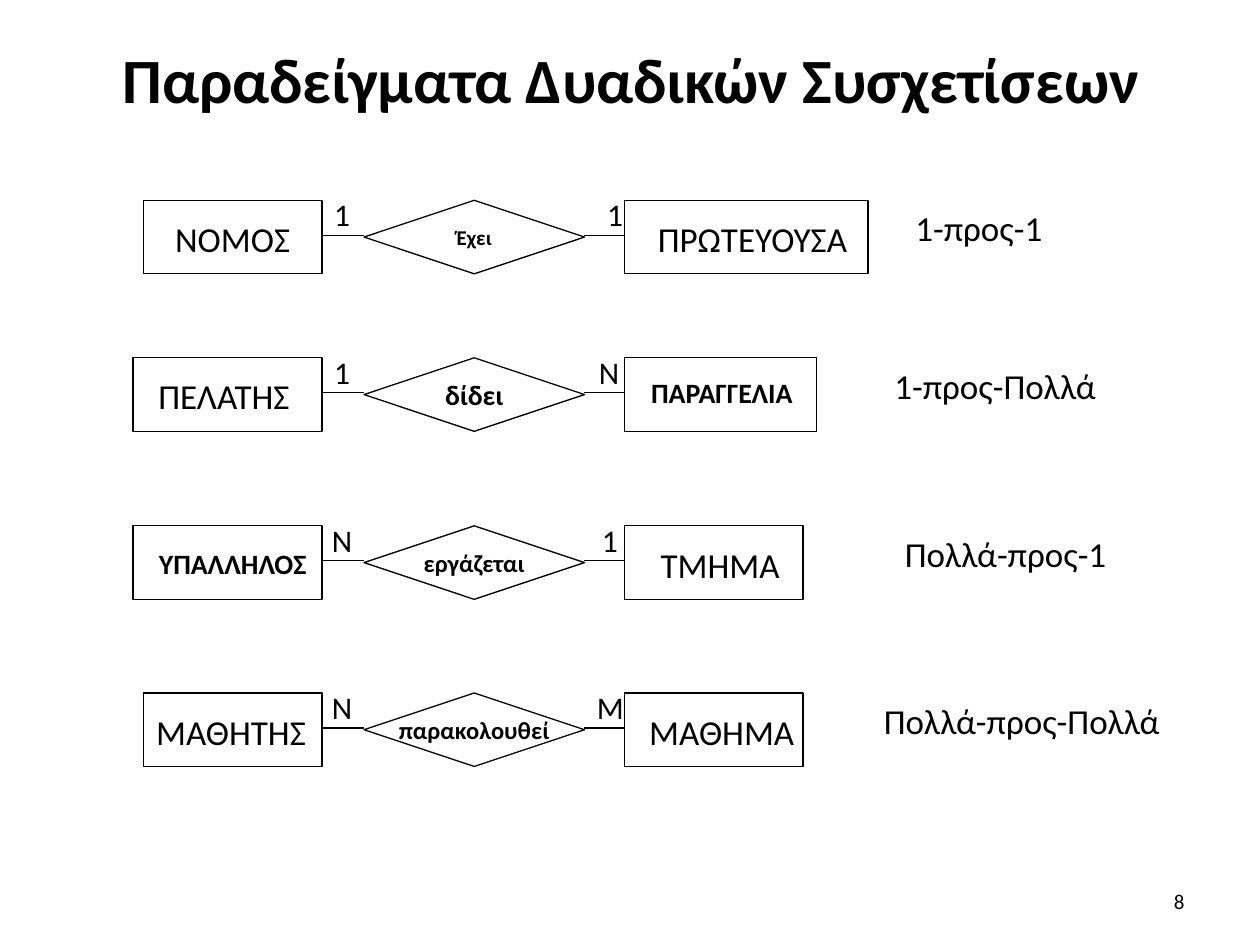
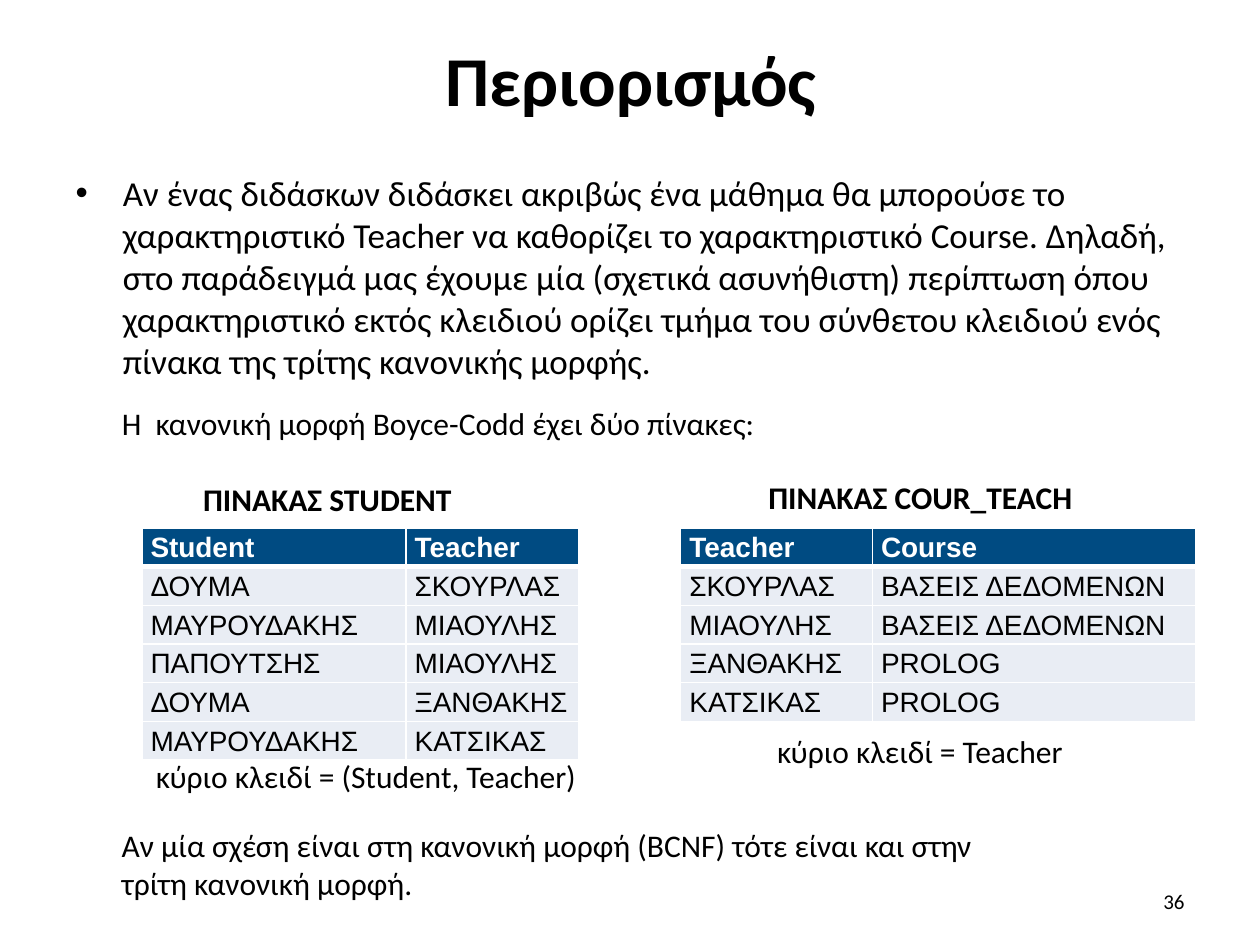
from dataclasses import dataclass
from typing import Any

from lxml import etree
from pptx import Presentation
from pptx.dml.color import RGBColor
from pptx.enum import shapes, text
from pptx.oxml import ns
from pptx.util import Pt

COLORS = {"ink": "000000", "paper": "FFFFFF", "header": "004B82", "row": "E9EDF4"}
BODY_FONT, TABLE_FONT = "Calibri", "Arial"
LEFT, CENTER, RIGHT = text.PP_ALIGN.LEFT, text.PP_ALIGN.CENTER, text.PP_ALIGN.RIGHT

# Shared geometry of the relationship diagrams, in points
ENTITY_HEIGHT = 42
LEFT_ENTITY_END, RIGHT_ENTITY_START = 184, 357
DIAMOND_LEFT, DIAMOND_WIDTH = 208, 126
LINK_DROP = 20
ROW_HEIGHT = 22.1


@dataclass
class Entity:
    name: str
    width: float
    label_center: float
    size: float = 20
    bold: bool = False
    label_drop: float = 6.5


@dataclass
class Relationship:
    top: float
    left: Entity
    verb: str
    verb_size: float
    right: Entity
    left_count: str
    right_count: str
    right_count_center: float
    ratio: str
    ratio_left: float


@dataclass
class Relation:
    caption: str
    caption_at: tuple[float, float]
    left: float
    widths: list[float]
    rows: list[list[str]]
    key: str
    key_at: tuple[float, float]


RELATIONSHIPS = [
    Relationship(114.5, Entity("ΝΟΜΟΣ", 102, 133), "Έχει", 12,
                 Entity("ΠΡΩΤΕΥΟΥΣΑ", 139, 430), "1", "1", 351.5, "1-προς-1", 516),
    Relationship(204.5, Entity("ΠΕΛΑΤΗΣ", 108, 128, label_drop=6), "δίδει", 16,
                 Entity("ΠΑΡΑΓΓΕΛΙΑ", 109.5, 412.5, 16, True),
                 "1", "Ν", 348, "1-προς-Πολλά", 504),
    Relationship(300.5, Entity("ΥΠΑΛΛΗΛΟΣ", 108, 133, 16, True, 8), "εργάζεται", 14,
                 Entity("ΤΜΗΜΑ", 102, 411.5), "Ν", "1", 348.5, "Πολλά-προς-1", 510),
    Relationship(396, Entity("ΜΑΘΗΤΗΣ", 102, 132), "παρακολουθεί", 14,
                 Entity("ΜΑΘΗΜΑ", 102, 412.5), "Ν", "Μ", 347, "Πολλά-προς-Πολλά", 498),
]

RELATIONS = [
    Relation("ΠΙΝΑΚΑΣ STUDENT", (109, 270.5), 81, [151, 98.75],
             [["Student", "Teacher"],
              ["ΔΟΥΜΑ", "ΣΚΟΥΡΛΑΣ"],
              ["ΜΑΥΡΟΥΔΑΚΗΣ", "ΜΙΑΟΥΛΗΣ"],
              ["ΠΑΠΟΥΤΣΗΣ", "ΜΙΑΟΥΛΗΣ"],
              ["ΔΟΥΜΑ", "ΞΑΝΘΑΚΗΣ"],
              ["ΜΑΥΡΟΥΔΑΚΗΣ", "ΚΑΤΣΙΚΑΣ"]],
             "κύριο κλειδί = (Student, Teacher)", (82, 429)),
    Relation("ΠΙΝΑΚΑΣ COUR_TEACH", (432, 269.5), 389, [109.5, 185],
             [["Teacher", "Course"],
              ["ΣΚΟΥΡΛΑΣ", "ΒΑΣΕΙΣ ΔΕΔΟΜΕΝΩΝ"],
              ["ΜΙΑΟΥΛΗΣ", "ΒΑΣΕΙΣ ΔΕΔΟΜΕΝΩΝ"],
              ["ΞΑΝΘΑΚΗΣ", "PROLOG"],
              ["ΚΑΤΣΙΚΑΣ", "PROLOG"]],
             "κύριο κλειδί = Teacher", (437, 414.5)),
]

CONSTRAINT = (
    "Αν ένας διδάσκων διδάσκει ακριβώς ένα μάθημα θα μπορούσε το χαρακτηριστικό "
    "Teacher να καθορίζει το χαρακτηριστικό Course. Δηλαδή, στο παράδειγμά μας έχουμε "
    "μία (σχετικά ασυνήθιστη) περίπτωση όπου χαρακτηριστικό εκτός κλειδιού ορίζει τμήμα "
    "του σύνθετου κλειδιού ενός πίνακα της τρίτης κανονικής μορφής."
)


def rgb(color: str) -> RGBColor:
    return RGBColor.from_string(COLORS[color])


def write(frame: Any, words: str, size: float, bold: bool = False, align: Any = LEFT,
          font: str = BODY_FONT, color: str = "ink") -> Any:
    """Fill a text frame with one formatted paragraph and return that paragraph."""
    frame.text = words
    paragraph = frame.paragraphs[0]
    paragraph.alignment = align
    paragraph.font.name = font
    paragraph.font.size = Pt(size)
    paragraph.font.bold = bold
    paragraph.font.color.rgb = rgb(color)
    return paragraph


def place(item: Any, left: float, top: float, width: float, height: float) -> None:
    item.left, item.top, item.width, item.height = map(Pt, (left, top, width, height))


def add_text(parent: Any, words: str, left: float, top: float, width: float,
             height: float = 29, size: float = 18, wrap: bool = True,
             **style: Any) -> Any:
    box = parent.shapes.add_textbox(*map(Pt, (left, top, width, height)))
    box.text_frame.word_wrap = wrap
    write(box.text_frame, words, size, **style)
    return box.text_frame


def add_centered(parent: Any, words: str, center: float, top: float, width: float,
                 **style: Any) -> None:
    """Add an unwrapped label centred on a horizontal position."""
    add_text(parent, words, center - width / 2, top, width, wrap=False,
             align=CENTER, **style)


def add_outline(parent: Any, kind: Any, left: float, top: float, width: float) -> Any:
    outline = parent.shapes.add_shape(
        kind, *map(Pt, (left, top, width, ENTITY_HEIGHT)))
    outline.shadow.inherit = False
    outline.fill.background()
    outline.line.color.rgb = rgb("ink")
    outline.line.width = Pt(0.75)
    return outline


def add_link(parent: Any, start: float, end: float, y: float) -> None:
    link = parent.shapes.add_connector(
        shapes.MSO_CONNECTOR.STRAIGHT, Pt(start), Pt(y), Pt(end), Pt(y))
    link.line.color.rgb = rgb("ink")
    link.line.width = Pt(0.75)
    etree.SubElement(link._element.spPr, ns.qn("a:effectLst"))


def add_entity(parent: Any, entity: Entity, left: float, top: float) -> None:
    add_outline(parent, shapes.MSO_SHAPE.RECTANGLE, left, top, entity.width)
    add_centered(parent, entity.name, entity.label_center, top + entity.label_drop,
                 entity.width, size=entity.size, bold=entity.bold)


def add_relationship(slide: Any, item: Relationship) -> None:
    group = slide.shapes.add_group_shape()
    add_entity(group, item.left, LEFT_ENTITY_END - item.left.width, item.top)
    add_entity(group, item.right, RIGHT_ENTITY_START, item.top)

    diamond = add_outline(group, shapes.MSO_SHAPE.DIAMOND, DIAMOND_LEFT, item.top,
                          DIAMOND_WIDTH)
    diamond.text_frame.word_wrap = False
    diamond.text_frame.vertical_anchor = text.MSO_ANCHOR.MIDDLE
    write(diamond.text_frame, item.verb, item.verb_size, bold=True, align=CENTER)

    link_y = item.top + LINK_DROP
    add_link(group, DIAMOND_LEFT, LEFT_ENTITY_END, link_y)
    add_link(group, RIGHT_ENTITY_START, DIAMOND_LEFT + DIAMOND_WIDTH, link_y)
    for count, center in ((item.left_count, 195.5),
                          (item.right_count, item.right_count_center)):
        add_centered(group, count, center, item.top - 6.5, 26)
    add_text(group, item.ratio, item.ratio_left, item.top, 186, 36, size=20)


def set_borders(cell: Any, bottom: float) -> None:
    properties = cell._tc.get_or_add_tcPr()
    for side, width in (("L", 1), ("R", 1), ("T", 1), ("B", bottom)):
        line = etree.SubElement(properties, ns.qn(f"a:ln{side}"), w=str(Pt(width)))
        fill = etree.SubElement(line, ns.qn("a:solidFill"))
        etree.SubElement(fill, ns.qn("a:srgbClr"), val=COLORS["paper"])


def add_relation(slide: Any, relation: Relation) -> None:
    """Add a table with its caption above and its primary key below."""
    add_text(slide, relation.caption, *relation.caption_at, 158 if relation.left < 200
             else 190, wrap=False, bold=True)
    table = slide.shapes.add_table(
        len(relation.rows), len(relation.widths), Pt(relation.left), Pt(301.75),
        Pt(sum(relation.widths)), Pt(ROW_HEIGHT * len(relation.rows))).table
    for column, width in zip(table.columns, relation.widths):
        column.width = Pt(width)
    for r, values in enumerate(relation.rows):
        header = r == 0
        table.rows[r].height = Pt(ROW_HEIGHT)
        for c, value in enumerate(values):
            cell = table.cell(r, c)
            cell.margin_left = cell.margin_right = Pt(5)
            cell.margin_top = cell.margin_bottom = 0
            set_borders(cell, 3 if header else 1)
            cell.fill.solid()
            cell.fill.fore_color.rgb = rgb("header" if header else "row")
            paragraph = write(cell.text_frame, value, 16, bold=header, font=TABLE_FONT,
                              color="paper" if header else "ink")
            paragraph.line_spacing = 1.15
    add_text(slide, relation.key, *relation.key_at, 258 if relation.left < 200 else 180,
             wrap=False)


def add_slide(deck: Any, layout: int, title: str, size: float, number: str) -> Any:
    slide = deck.slides.add_slide(deck.slide_layouts[layout])
    heading = slide.shapes.title
    place(heading, 36.5, 9.5, 648, 71)
    heading.text_frame.auto_size = text.MSO_AUTO_SIZE.NONE
    heading.text_frame.vertical_anchor = text.MSO_ANCHOR.MIDDLE
    write(heading.text_frame, title, size, bold=True, align=CENTER)
    footer = add_text(slide, number, 516, 500.5, 168, size=12, align=RIGHT)
    footer.vertical_anchor = text.MSO_ANCHOR.MIDDLE
    return slide


def build_examples(deck: Any) -> None:
    slide = add_slide(deck, 5, "Παραδείγματα Δυαδικών Συσχετίσεων", 36, "8")
    for item in RELATIONSHIPS:
        add_relationship(slide, item)


def build_constraint(deck: Any) -> None:
    slide = add_slide(deck, 1, "Περιορισμός", 40, "36")
    body = slide.placeholders[1]
    place(body, 36, 94.5, 648, 133)
    body.text_frame.auto_size = text.MSO_AUTO_SIZE.NONE
    write(body.text_frame, CONSTRAINT, 20)
    add_text(slide, "Η  κανονική μορφή Boyce-Codd έχει δύο πίνακες:", 62.5, 227.5, 442)
    for relation in RELATIONS:
        add_relation(slide, relation)
    add_text(slide, "Αν μία σχέση είναι στη κανονική μορφή (BCNF) τότε είναι και στην "
             "τρίτη κανονική μορφή.", 62.5, 468.5, 529, 51)


def main() -> None:
    deck = Presentation()
    deck.slide_width, deck.slide_height = Pt(720), Pt(540)
    build_examples(deck)
    build_constraint(deck)
    deck.save("out.pptx")


if __name__ == "__main__":
    main()
